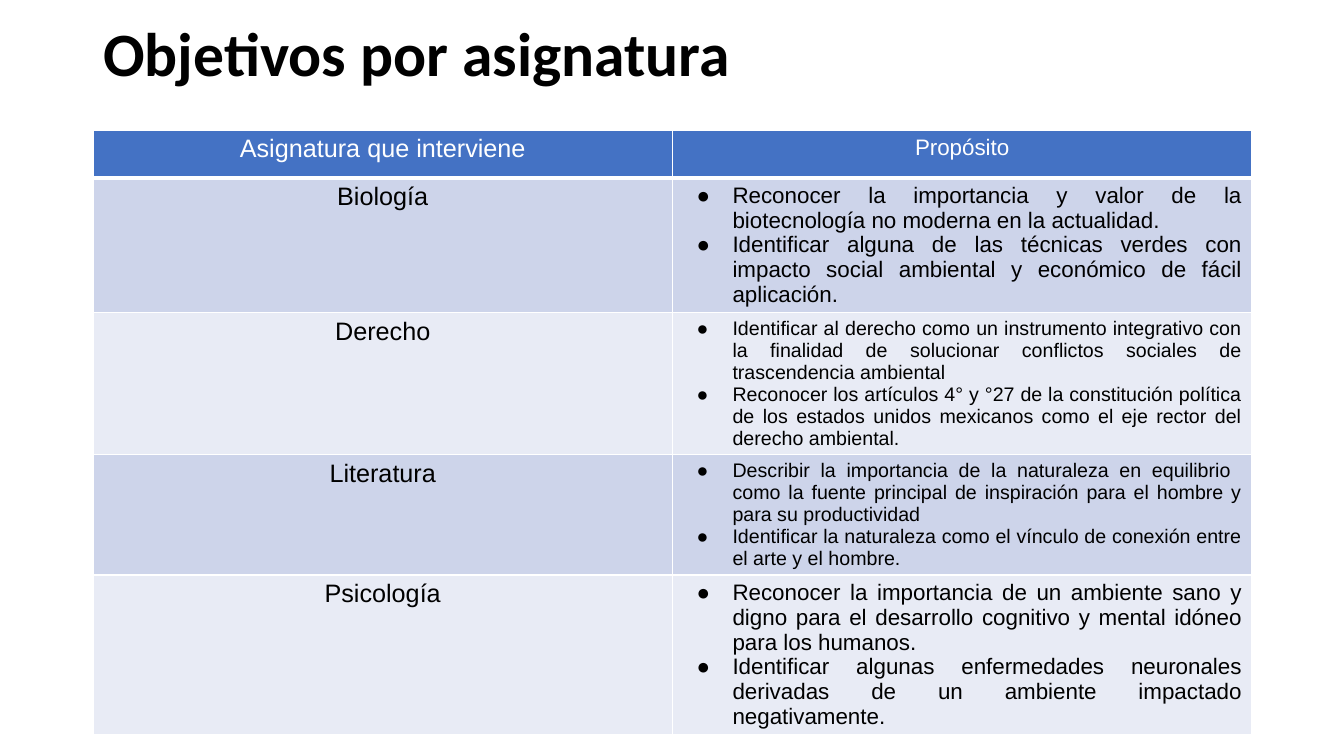
import pptx
import pptx.util
import pptx.dml.color
import pptx.enum.text
import pptx.oxml
import pptx.oxml.ns

TITLE = "Objetivos por asignatura"
HEADERS = [("Asignatura que interviene", 18), ("Propósito", 16)]
# subject, size of its purposes in points, row height in px, purposes
SUBJECTS = [
    ("Biología", 16, 134, [
        "Reconocer la importancia y valor de la biotecnología no moderna en la actualidad.",
        "Identificar alguna de las técnicas verdes con impacto social ambiental y económico "
        "de fácil aplicación.",
    ]),
    ("Derecho", 14, 142, [
        "Identificar al derecho como un instrumento integrativo con la finalidad de solucionar "
        "conflictos sociales de trascendencia ambiental",
        "Reconocer los artículos 4° y °27 de la constitución política de los estados unidos "
        "mexicanos como el eje rector del derecho ambiental.",
    ]),
    ("Literatura", 14, 120, [
        "Describir la importancia de la naturaleza en equilibrio  como la fuente principal de "
        "inspiración para el hombre y para su productividad",
        "Identificar la naturaleza como el vínculo de conexión entre el arte y el hombre.",
    ]),
    ("Psicología", 16, 159, [
        "Reconocer la importancia de un ambiente sano y digno para el desarrollo cognitivo y "
        "mental idóneo para los humanos.",
        "Identificar algunas enfermedades neuronales derivadas de un ambiente impactado "
        "negativamente.",
    ]),
]
COLORS = {"text": "000000", "light": "FFFFFF", "header": "4472C4",
          "band_dark": "CDD4EA", "band_light": "E8EBF5"}
SLIDE_WIDTH, SLIDE_HEIGHT = 1344, 756
LEFT, WIDTH = 93, 1159
TITLE_TOP, TITLE_HEIGHT = -16, 146
TABLE_TOP, HEADER_HEIGHT = 130, 48
BULLET_MARGIN, BULLET_INDENT = 50, -36
SUBJECT_SIZE = 18
ALIGN = pptx.enum.text.PP_ALIGN


def px(length):
    return pptx.util.Emu(round(length * 914400 / 100.8))


def format_runs(paragraph, font_name, size, color, bold=False):
    for run in paragraph.runs:
        run.font.name = font_name
        run.font.size = pptx.util.Pt(size)
        run.font.bold = bold
        run.font.color.rgb = pptx.dml.color.RGBColor.from_string(COLORS[color])


def add_bullet(paragraph):
    properties = paragraph._p.get_or_add_pPr()
    properties.set("marL", str(px(BULLET_MARGIN)))
    properties.set("indent", str(px(BULLET_INDENT)))
    namespace = pptx.oxml.ns.nsdecls("a")
    for xml in (
        f'<a:buClr {namespace}><a:srgbClr val="{COLORS["text"]}"/></a:buClr>',
        f'<a:buFont {namespace} typeface="Arial"/>',
        f'<a:buChar {namespace} char="●"/>',
    ):
        properties.append(pptx.oxml.parse_xml(xml))


def set_borders(cell, bottom_width):
    properties = cell._tc.get_or_add_tcPr()
    widths = {"lnL": 1, "lnR": 1, "lnT": 1, "lnB": bottom_width}
    for position, (side, width) in enumerate(widths.items()):
        properties.insert(position, pptx.oxml.parse_xml(
            f'<a:{side} {pptx.oxml.ns.nsdecls("a")} w="{pptx.util.Pt(width)}"><a:solidFill>'
            f'<a:srgbClr val="{COLORS["light"]}"/></a:solidFill></a:{side}>'))


def fill_cell(cell, lines, size, fill, color="text", align=ALIGN.CENTER, bullets=False,
              bottom_width=1):
    cell.fill.solid()
    cell.fill.fore_color.rgb = pptx.dml.color.RGBColor.from_string(COLORS[fill])
    set_borders(cell, bottom_width)
    cell.text_frame.text = "\n".join(lines)
    for paragraph in cell.text_frame.paragraphs:
        paragraph.alignment = align
        format_runs(paragraph, "Arial", size, color)
        if bullets:
            add_bullet(paragraph)


def add_title(slide):
    title = slide.shapes.title
    title.left, title.top = px(LEFT), px(TITLE_TOP)
    title.width, title.height = px(WIDTH), px(TITLE_HEIGHT)
    title.text_frame.text = TITLE
    title.text_frame.auto_size = pptx.enum.text.MSO_AUTO_SIZE.NONE
    title.text_frame.vertical_anchor = pptx.enum.text.MSO_ANCHOR.MIDDLE
    paragraph = title.text_frame.paragraphs[0]
    paragraph.alignment = ALIGN.LEFT
    paragraph.line_spacing = 0.9
    format_runs(paragraph, "Calibri", 44, "text", bold=True)


def add_subject_table(slide):
    heights = [HEADER_HEIGHT] + [height for _, _, height, _ in SUBJECTS]
    table = slide.shapes.add_table(len(heights), len(HEADERS), px(LEFT), px(TABLE_TOP),
                                   px(WIDTH), px(sum(heights))).table
    for row, height in zip(table.rows, heights):
        row.height = px(height)
    for column, (header, size) in enumerate(HEADERS):
        fill_cell(table.cell(0, column), [header], size, "header", "light", bottom_width=3)
    for row, (subject, size, _, purposes) in enumerate(SUBJECTS, start=1):
        fill = "band_dark" if row % 2 else "band_light"
        fill_cell(table.cell(row, 0), [subject], SUBJECT_SIZE, fill)
        fill_cell(table.cell(row, 1), purposes, size, fill, align=ALIGN.JUSTIFY, bullets=True)


def main():
    presentation = pptx.Presentation()
    presentation.slide_width, presentation.slide_height = px(SLIDE_WIDTH), px(SLIDE_HEIGHT)
    slide = presentation.slides.add_slide(presentation.slide_layouts[5])
    add_title(slide)
    add_subject_table(slide)
    presentation.save("out.pptx")


if __name__ == "__main__":
    main()
